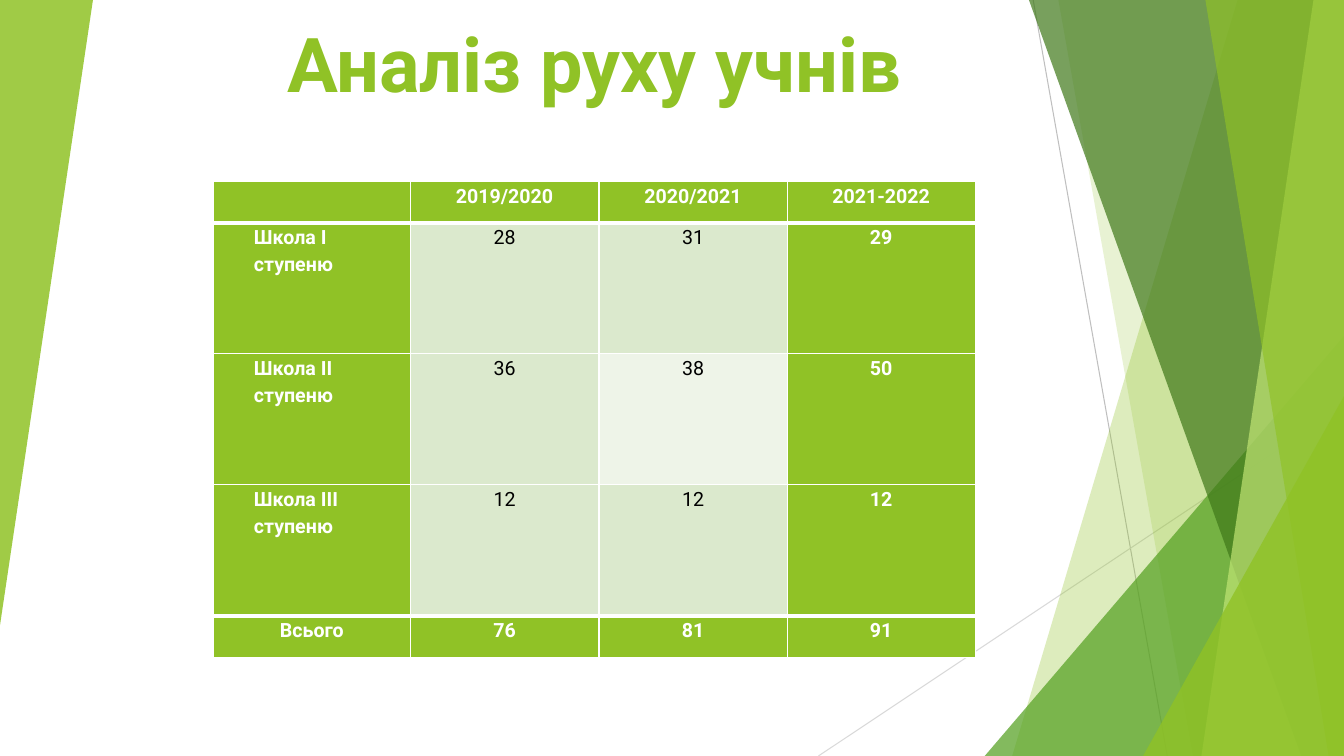
import pptx
import pptx.dml.color
import pptx.enum.shapes
import pptx.enum.text
import pptx.oxml.ns
import pptx.util
from lxml import etree

Pt = pptx.util.Pt
PP = pptx.enum.text.PP_ALIGN
qn = pptx.oxml.ns.qn

W, H = 960, 540
GREEN, WHITE, BLACK = "90C226", "FFFFFF", "000000"
PALE, PALER = "DBE9CD", "EEF4E8"

TITLE = "Аналіз руху учнів"
ROWS = [
    ("", "2019/2020", "2020/2021", "2021-2022"),
    ("Школа І ступеню", "28", "31", "29"),
    ("Школа ІІ ступеню", "36", "38", "50"),
    ("Школа ІІІ ступеню", "12", "12", "12"),
    ("Всього", "76", "81", "91"),
]
COL_WIDTHS = (140.4, 134.9, 134.4, 134.4)
ROW_HEIGHTS = (29.5, 93.6, 93.6, 93.6, 29.5)

RAYS = [
    ((738, 0), (833.8, H), "BFBFBF"),
    ((W, 290), (584.6, H), "D9D9D9"),
]
BAND, TRIANGLE = "band", "triangle"
FACETS = [
    (BAND, (884, 723), GREEN, 30),
    (BAND, (756, 852), GREEN, 20),
    (TRIANGLE, (703.4, 240, 256.6, 300, 0), "54A021", 72),
    (BAND, (735, 929.5), "3F7819", 70),
    (BAND, (938.2, 858.2), "C0E474", 70),
    (BAND, (861, 949), GREEN, 65),
    (TRIANGLE, (816.5, 283, 143.5, 257, 0), GREEN, 80),
    (TRIANGLE, (0, 0, 66.4, 446.6, 180), GREEN, 85),
]


def color(hex_code):
    return pptx.dml.color.RGBColor.from_string(hex_code)


def apply(obj, values):
    for name, value in values.items():
        setattr(obj, name, value)


def paint(target, hex_code, alpha=100):
    target.fill.solid()
    target.fill.fore_color.rgb = color(hex_code)
    if alpha < 100:
        clr = target.fill._xPr.find(qn("a:solidFill"))[0]
        etree.SubElement(clr, qn("a:alpha"), val=str(alpha * 1000))


def write(tf, text, size, hex_code, bold, spacing=1.0, align=PP.CENTER):
    p = tf.paragraphs[0]
    apply(p, {"alignment": align, "line_spacing": spacing})
    r = p.add_run()
    r.text = text
    apply(r.font, {"name": "Roboto", "size": Pt(size), "bold": bold})
    r.font.color.rgb = color(hex_code)


def add_ray(s, start, end, hex_code):
    ln = s.shapes.add_connector(
        pptx.enum.shapes.MSO_CONNECTOR.STRAIGHT, *map(Pt, start + end))
    ln.line.color.rgb = color(hex_code)
    ln.line.width = Pt(0.75)
    etree.SubElement(ln._element.spPr, qn("a:effectLst"))


def add_facet(s, kind, place, hex_code, alpha):
    if kind == BAND:
        top_x, bottom_x = place
        points = [(top_x, 0), (W, 0), (W, H), (bottom_x, H)]
        corners = [(Pt(x), Pt(y)) for x, y in points]
        builder = s.shapes.build_freeform(*corners[0])
        builder.add_line_segments(corners[1:], close=True)
        sp = builder.convert_to_shape()
    else:
        *box, turn = place
        sp = s.shapes.add_shape(
            pptx.enum.shapes.MSO_SHAPE.ISOSCELES_TRIANGLE, *map(Pt, box))
        sp.adjustments[0] = 1.0
        sp.rotation = turn
    sp.shadow.inherit = False
    sp.line.fill.background()
    paint(sp, hex_code, alpha)


def add_borders(cell, widths):
    tcPr = cell._tc.get_or_add_tcPr()
    for side, width in widths.items():
        ln = etree.SubElement(tcPr, qn("a:ln" + side), w=str(Pt(width)))
        fill = etree.SubElement(ln, qn("a:solidFill"))
        etree.SubElement(fill, qn("a:srgbClr"), val=WHITE)


def add_title(s):
    sp = s.shapes.add_textbox(Pt(118.8), Pt(12.2), Pt(611.3), Pt(129.6))
    tf = sp.text_frame
    apply(tf, {"word_wrap": True, "margin_top": 0,
               "vertical_anchor": pptx.enum.text.MSO_ANCHOR.TOP})
    write(tf, TITLE, 54, GREEN, True)


def add_pupil_table(s):
    last_row, last_col = len(ROWS) - 1, len(COL_WIDTHS) - 1
    table = s.shapes.add_table(
        len(ROWS), len(COL_WIDTHS), Pt(152.6), Pt(129.6),
        Pt(sum(COL_WIDTHS)), Pt(sum(ROW_HEIGHTS))).table
    apply(table, {"first_row": False, "horz_banding": False})
    for col, width in zip(table.columns, COL_WIDTHS):
        col.width = Pt(width)
    for row, height in zip(table.rows, ROW_HEIGHTS):
        row.height = Pt(height)

    for i, values in enumerate(ROWS):
        for j, text in enumerate(values):
            cell = table.cell(i, j)
            body = 0 < i < last_row
            label = body and j == 0
            plain = body and 0 < j < last_col
            apply(cell, {"margin_left": Pt(28.8 if label else 5),
                         "margin_right": Pt(5),
                         "margin_top": 0, "margin_bottom": 0})
            add_borders(cell, {"L": 1, "R": 1,
                               "T": 3 if i in (1, last_row) else 1,
                               "B": 3 if i in (0, last_row - 1) else 1})
            tint = PALER if (i, j) == (2, 2) else PALE
            paint(cell, tint if plain else GREEN)
            if text:
                write(cell.text_frame, text, 14, BLACK if plain else WHITE,
                      not plain, 1.15, PP.LEFT if label else PP.CENTER)


def main():
    prs = pptx.Presentation()
    apply(prs, {"slide_width": Pt(W), "slide_height": Pt(H)})
    s = prs.slides.add_slide(prs.slide_layouts[6])
    for ray in RAYS:
        add_ray(s, *ray)
    for facet in FACETS:
        add_facet(s, *facet)
    add_title(s)
    add_pupil_table(s)
    prs.save("out.pptx")


if __name__ == "__main__":
    main()
